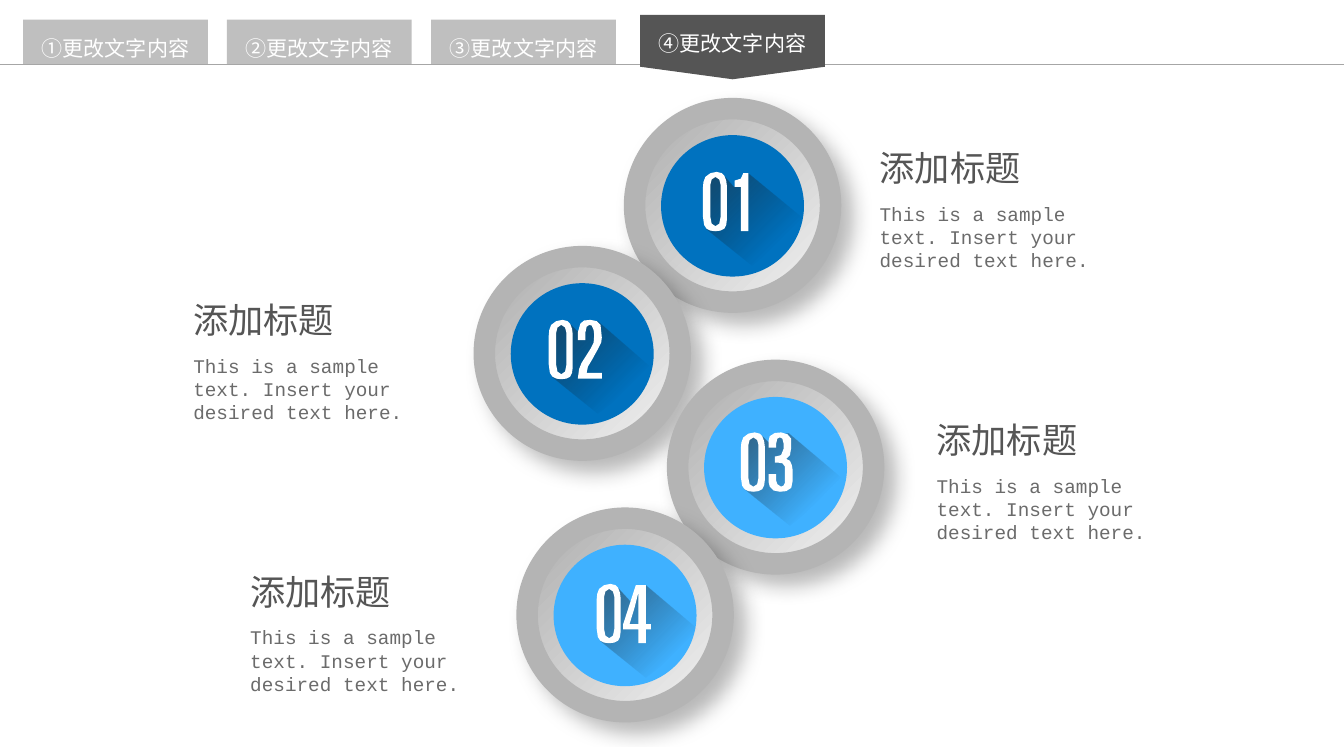
from copy import deepcopy

from lxml.etree import SubElement
from pptx import Presentation
from pptx.dml.color import RGBColor
from pptx.enum.shapes import MSO_CONNECTOR, MSO_SHAPE
from pptx.enum.text import MSO_ANCHOR, MSO_AUTO_SIZE, PP_ALIGN
from pptx.oxml.ns import qn
from pptx.util import Pt

CHINESE = "Noto Sans CJK SC"
color = RGBColor.from_string


def paint(shape, fill):
    shape.shadow.inherit = False
    shape.fill.solid()
    shape.fill.fore_color.rgb = color(fill)
    shape.line.fill.background()


def write(box, text, size, font, fill):
    frame = box.text_frame
    frame.word_wrap = True
    frame.vertical_anchor = MSO_ANCHOR.TOP
    para = frame.paragraphs[0]
    span = para.add_run()
    span.text = text
    span.font.size = Pt(size)
    span.font.name = font
    span.font.color.rgb = color(fill)
    SubElement(span.font._element, qn("a:ea"), typeface=font)
    return frame, para


deck = Presentation()
deck.slide_width, deck.slide_height = Pt(765.4), Pt(425.5)
page = deck.slides.add_slide(deck.slide_layouts[5])
shapes = page.shapes

# Numeral outlines, in hundredths of an inch from their own top left corner
ZERO = [
    [(11, 0), (15, 1), (17, 3), (18.5, 7), (19, 11), (19, 38), (18.5, 42), (17, 45), (14, 46.5),
     (10, 47), (6, 46.5), (3, 45), (1, 42), (0, 35), (0, 13), (0.5, 8), (2, 4), (6, 1)],
    [(10, 43), (13, 41), (14, 36), (14, 10), (13, 6), (10, 4), (7, 6), (6, 10), (6, 36), (7, 41)],
]
ONE = [[(0, 6), (5, 4.5), (7, 0), (11, 0), (11, 46), (5, 46), (5, 11), (0, 11)]]
TWO = [[(0, 10), (2, 3), (5, 0.5), (10, 0), (15, 1), (18, 4), (19, 14), (18.5, 18), (16, 23),
        (11, 32), (8, 37), (7, 42), (19, 42), (19, 46.5), (0, 46.5), (1, 39), (3, 34), (10, 23),
        (12.5, 18), (13, 12), (12.5, 8), (11, 4.5), (9, 4), (7, 5.5), (6, 10), (6, 16), (0, 16)]]
THREE = [[(6, 33), (6, 38), (7, 41), (10, 43), (12, 42), (13, 40), (13, 27), (11, 24.5), (8, 24),
          (5, 24), (5, 19), (6, 19), (10, 18), (12, 13), (12, 9), (11, 5), (9, 4), (7, 5), (6, 9),
          (6, 12), (0, 12), (0, 7), (1, 3), (5, 0.5), (10, 0), (15, 1.5), (18, 5), (18, 12),
          (17, 18), (14, 21), (17, 22.5), (18.5, 26), (19, 29), (19, 39), (18, 44), (14, 46.5),
          (9, 47), (4, 46), (1, 43), (0, 39), (0, 33)]]
FOUR = [
    [(10, 0), (18, 0), (18, 31), (22, 31), (22, 35), (18, 35), (18, 46), (12, 46), (12, 35),
     (0, 35), (0, 31)],
    [(12, 31), (12, 6), (9, 18), (5, 31)],
]
CAST_START = [(39, 74), (3, 45), (3, 4), (17, 3)]

# Medallions: place, core colour, inset of the zero, second digit and its offset, cast shadow end
medallions = [
    (361.4, 61.9, "0072BF", 38.9, 36, ONE, 18, 0.7, [(25, 12), (31, 6), (36, 1), (82, 39)]),
    (275.8, 146.2, "0072BF", 36.7, 36, TWO, 16.6, 0, [(26, 12), (28, 3), (39, 1), (84, 40)]),
    (385.9, 211, "3FB1FF", 36, 35.3, THREE, 15.8, 0, [(26, 12), (28, 3), (38, 1), (83, 39)]),
    (300.2, 295.2, "3FB1FF", 39.6, 37.4, FOUR, 15.1, 0.7, [(28, 15), (32, 3), (39, 1), (84, 39)]),
]
for left, top, fill, inset_x, inset_y, digit, digit_x, digit_y, cast_end in medallions:
    # Raised ring
    ring = shapes.add_shape(MSO_SHAPE.OVAL, Pt(left), Pt(top), Pt(111.6), Pt(110.2))
    paint(ring, "ADADAD")
    ring.fill.gradient()
    ring.fill.gradient_angle = 315
    for stop, tone in zip(ring.fill.gradient_stops, ("ADADAD", "F3F3F3")):
        stop.color.rgb = color(tone)
    ring.line.color.rgb = color("B4B4B4")
    ring.line.width = Pt(12.25)
    effects = ring._element.spPr.find(qn("a:effectLst"))
    shade = SubElement(effects, qn("a:outerShdw"), blurRad=str(Pt(12)), dist=str(Pt(9)),
                       dir="2700000", algn="tl", rotWithShape="0")
    black = SubElement(shade, qn("a:srgbClr"), val="000000")
    SubElement(black, qn("a:alpha"), val="28000")

    # Coloured core
    core = shapes.add_shape(MSO_SHAPE.OVAL, Pt(left + 15.1), Pt(top + 15.1), Pt(81.4), Pt(80.6))
    paint(core, fill)

    # Cast shadow below the two numerals
    cast = [CAST_START + cast_end]
    zero_x, zero_y = left + inset_x, top + inset_y
    for contours, x, y in ((cast, zero_x, zero_y), (ZERO, zero_x, zero_y),
                           (digit, zero_x + digit_x, zero_y + digit_y)):
        builder = None
        for contour in contours:
            points = [(10 * px, 10 * py) for px, py in contour]
            if builder is None:
                builder = shapes.build_freeform(*points[0], scale=Pt(0.072))
            else:
                builder.move_to(*points[0])
            builder.add_line_segments(points[1:], close=True)
        outline = builder.convert_to_shape(Pt(x), Pt(y))
        paint(outline, "FFFFFF")
        if contours is cast:
            outline.fill.gradient()
            outline.fill.gradient_angle = 315
            stops = outline.fill.gradient_stops
            for stop, place, tone, alpha in zip(stops, (0, 0.73), ("272727", "0D0D0D"), (55, 0)):
                stop.position = place
                stop.color.rgb = color(tone)
                tint = stop._gs.find(qn("a:srgbClr"))
                SubElement(tint, qn("a:alpha"), val=str(alpha * 1000))
            last = deepcopy(stops[1]._gs)
            last.set("pos", "100000")
            last.find(qn("a:srgbClr")).set("val", "272727")
            stops[1]._gs.addnext(last)

# Headings with sample text
for left, top in ((493.9, 79.9), (526.3, 234.7), (103, 166.3), (135.4, 321.1)):
    for text, drop, width, height, size, font, fill in (
        ("This is a sample text. Insert your desired text here.", 31.7, 151.2, 33.8, 11,
         "Courier New", "6B6B6B"),
        ("添加标题", 0, 114.5, 31.7, 20, CHINESE, "555555"),
    ):
        box = shapes.add_textbox(Pt(left), Pt(top + drop), Pt(width), Pt(height))
        frame, para = write(box, text, size, font, fill)
        frame.auto_size = MSO_AUTO_SIZE.SHAPE_TO_FIT_TEXT

# Navigation line
rule = shapes.add_connector(MSO_CONNECTOR.STRAIGHT, Pt(0), Pt(36.7), Pt(765.4), Pt(36.7))
rule.line.color.rgb = color("A6A6A6")
rule.line.width = Pt(0.75)
SubElement(rule._element.spPr, qn("a:effectLst"))

# Navigation tabs: the last one is active and carries the slide title
tabs = [
    ("①更改文字内容", 65.8, 23.8, 25.2, 0, "BFBFBF", 17.3),
    ("②更改文字内容", 181.8, 23.8, 25.2, 0, "BFBFBF", 17.3),
    ("③更改文字内容", 298.2, 23.8, 25.2, 0, "BFBFBF", 17.3),
    ("④更改文字内容", 417.2, 26.8, 36.7, 0.194, "555555", 14.4),
]
for text, center_x, center_y, depth, tip, fill, text_top in tabs:
    tab = shapes.add_shape(MSO_SHAPE.PENTAGON, Pt(center_x - depth / 2), Pt(center_y - 52.6),
                           Pt(depth), Pt(105.2))
    tab.rotation = 90
    tab.adjustments[0] = tip
    paint(tab, fill)
    if tip:
        label = shapes.title
        tab._element.addnext(label._element)
    else:
        label = shapes.add_textbox(Pt(0), Pt(0), Pt(1), Pt(1))
    label.left, label.top = Pt(center_x - 81.4), Pt(text_top)
    label.width, label.height = Pt(162.8), Pt(19.4)
    frame, para = write(label, text, 12, CHINESE, "FFFFFF")
    frame.auto_size = MSO_AUTO_SIZE.NONE
    frame.margin_left = frame.margin_right = frame.margin_top = frame.margin_bottom = 0
    para.alignment = PP_ALIGN.CENTER
    para.line_spacing = 1.2

deck.save("out.pptx")
